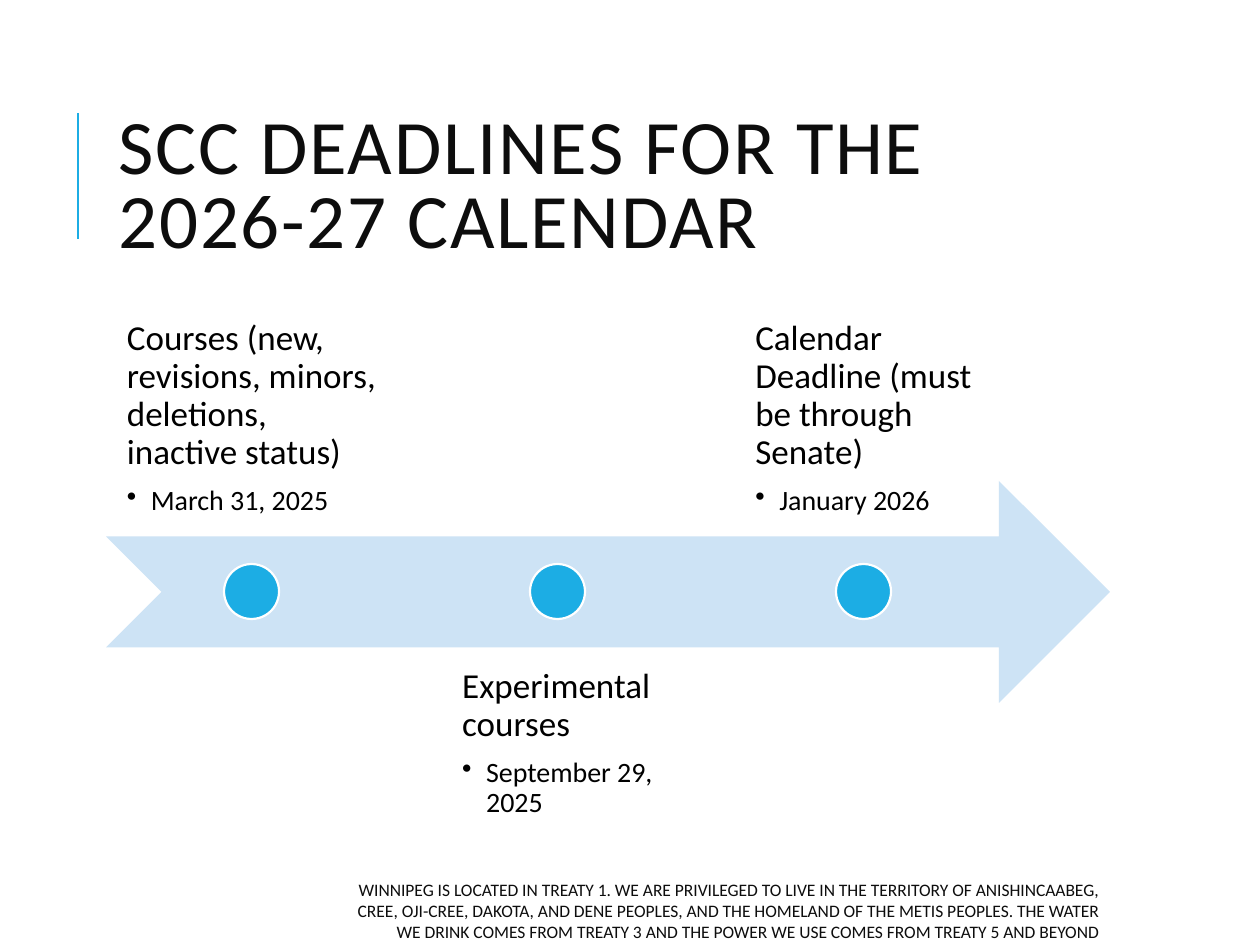
from lxml.etree import SubElement
from pptx import Presentation
from pptx.dml.color import RGBColor as Rgb
from pptx.enum.shapes import MSO_CONNECTOR as Link, MSO_SHAPE as Shape
from pptx.enum.text import MSO_ANCHOR as Anchor, MSO_AUTO_SIZE as Fit, PP_ALIGN as Align
from pptx.oxml.ns import qn
from pptx.util import Emu, Pt

EMU = 914400 / 126  # one px
INK = {"blue": "1CADE4", "pale": "CDE3F5", "white": "FFFFFF",
       "dark": "0D0D0D", "black": "000000"}


def px(*nums):
    return [Emu(round(n * EMU)) for n in nums]


class Deck:
    font = "Calibri"

    def __init__(self, wide, high):
        self.prs = Presentation()
        self.prs.slide_width, self.prs.slide_height = px(wide, high)
        self.slide = self.prs.slides.add_slide(self.prs.slide_layouts[5])

    def color(self, name):
        return Rgb.from_string(INK[name])

    def run(self, para, text, size, ink):
        run = para.add_run()
        run.text = text
        font = run.font
        font.name, font.size = self.font, Pt(size)
        font.color.rgb = self.color(ink)
        return run

    def frame(self, shape, anchor):
        frame = shape.text_frame
        frame.word_wrap, frame.auto_size = True, Fit.NONE
        frame.vertical_anchor = anchor
        return frame

    def title(self, text, *box):
        shape = self.slide.shapes.title
        shape.left, shape.top, shape.width, shape.height = px(*box)
        para = self.frame(shape, Anchor.MIDDLE).paragraphs[0]
        para.alignment, para.line_spacing = Align.LEFT, 0.8
        run = self.run(para, text, 44, "dark")
        run.font._element.set("spc", "100")

    def line(self, ink, width, *ends):
        line = self.slide.shapes.add_connector(Link.STRAIGHT, *px(*ends))
        line.line.color.rgb, line.line.width = self.color(ink), Pt(width)
        SubElement(line._element.spPr, qn("a:effectLst"))

    def shape(self, kind, fill, *box, edge=None):
        shape = self.slide.shapes.add_shape(kind, *px(*box))
        shape.shadow.inherit = False
        shape.fill.solid()
        shape.fill.fore_color.rgb = self.color(fill)
        if edge:
            shape.line.color.rgb, shape.line.width = self.color(edge), Pt(1.25)
        else:
            shape.line.fill.background()

    def label(self, head, date, anchor, *box):
        frame = self.frame(self.slide.shapes.add_textbox(*px(*box)), anchor)
        inset, = px(20)
        frame.margin_left = frame.margin_right = inset
        frame.margin_top = frame.margin_bottom = inset
        # Centre the block of left-aligned lines
        frame._element.bodyPr.set("anchorCtr", "1")
        top, sub = frame.paragraphs[0], frame.add_paragraph()
        top.line_spacing = sub.line_spacing = 0.9
        top.space_after, sub.space_after = Pt(8.5), Pt(3)
        self.run(top, head, 20, "black")
        # Bulleted date
        sub.level = 1
        props = sub._element.get_or_add_pPr()
        dent, = px(24)
        props.set("marL", str(dent))
        props.set("indent", str(-dent))
        SubElement(props, qn("a:buChar"), char="•")
        self.run(sub, date, 16, "black")

    def note(self, text, *box):
        frame = self.frame(self.slide.shapes.add_textbox(*px(*box)), Anchor.MIDDLE)
        para = frame.paragraphs[0]
        para.alignment = Align.RIGHT
        self.run(para, text, 10, "dark")


STEPS = [
    ("Courses (new, revisions, minors, deletions, inactive status)", "March 31, 2025"),
    ("Experimental courses", "September 29, 2025"),
    ("Calendar Deadline (must be through Senate)", "January 2026"),
]


def main():
    deck = Deck(1260, 945)

    # Heading with accent line
    deck.line("blue", 1.5, 78, 239, 78, 113)
    deck.title("SCC DEADLINES FOR THE 2026-27 CALENDAR", 106, 86, 1004, 207)

    # Timeline: labels alternate above and below the arrow
    deck.shape(Shape.NOTCHED_RIGHT_ARROW, "pale", 106, 481, 1004, 222)
    wide, high, step, dot = 291, 222, 306, 55
    for i, (head, date) in enumerate(STEPS):
        left = 106 + i * step
        top, anchor = (648, Anchor.TOP) if i % 2 else (315, Anchor.BOTTOM)
        deck.label(head, date, anchor, left, top, wide, high)
        deck.shape(Shape.OVAL, "blue", left + (wide - dot) / 2, 564, dot, dot,
                   edge="white")

    # Land acknowledgement
    deck.note("WINNIPEG IS LOCATED IN TREATY 1. WE ARE PRIVILEGED TO LIVE IN THE "
              "TERRITORY OF ANISHINCAABEG, CREE, OJI-CREE, DAKOTA, AND DENE PEOPLES, "
              "AND THE HOMELAND OF THE METIS PEOPLES. THE WATER WE DRINK COMES FROM "
              "TREATY 3 AND THE POWER WE USE COMES FROM TREATY 5 AND BEYOND",
              336, 892, 775, 38)

    deck.prs.save("out.pptx")


if __name__ == "__main__":
    main()
